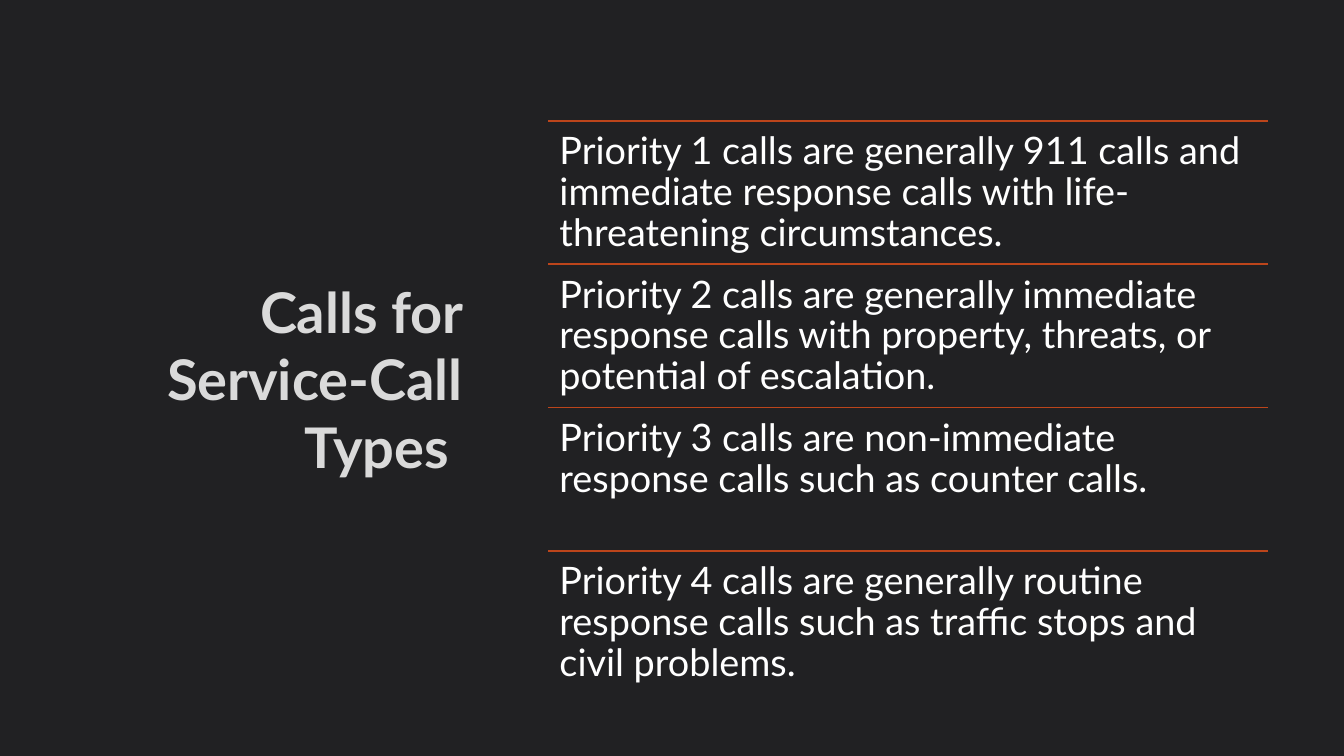
from lxml import etree
from pptx import Presentation
from pptx.dml.color import RGBColor
from pptx.enum.shapes import MSO_CONNECTOR
from pptx.enum.text import MSO_ANCHOR, MSO_AUTO_SIZE, PP_ALIGN
from pptx.oxml import parse_xml
from pptx.oxml.ns import nsdecls, qn
from pptx.util import Cm, Pt

TITLE = "Calls for Service-Call Types "
CALLS = [
    "Priority 1 calls are generally 911 calls and immediate response calls "
    "with life-threatening circumstances.",
    "Priority 2 calls are generally immediate response calls with property, "
    "threats, or potential of escalation.",
    "Priority 3 calls are non-immediate response calls such as counter calls.",
    "Priority 4 calls are generally routine response calls such as traffic "
    "stops and civil problems.",
]
COLORS = {"back": "212123", "title": "DADADA", "text": "FFFFFF", "rule": "BC451B"}
FONT = "Lato"
TITLE_ONLY = 5
STRAIGHT = MSO_CONNECTOR.STRAIGHT
MIDDLE, TOP = MSO_ANCHOR.MIDDLE, MSO_ANCHOR.TOP
LEFT, RIGHT = PP_ALIGN.LEFT, PP_ALIGN.RIGHT
NO_FIT = MSO_AUTO_SIZE.NONE

# Lengths in centimetres
LIST_X, LIST_Y, LIST_W, ROW_H = 13.82, 3.05, 18.14, 3.61
INSET = 0.28


def color(name):
    return RGBColor.from_string(COLORS[name])


def write(shape, text, size, hue, align, anchor):
    """Fill the shape with one formatted paragraph and return it."""
    frame = shape.text_frame
    frame.text = text
    frame.word_wrap = True
    frame.auto_size = NO_FIT
    frame.vertical_anchor = anchor
    para = frame.paragraphs[0]
    para.alignment = align
    font = para.runs[0].font
    font.size = Pt(size)
    font.name = FONT
    font.color.rgb = color(hue)
    return para


def add_title(slide):
    title = slide.shapes.title
    title.left, title.top = Cm(3.38), Cm(LIST_Y)
    title.width, title.height = Cm(8.53), Cm(12.98)
    para = write(title, TITLE, 40, "title", RIGHT, MIDDLE)
    font = para.runs[0].font
    font.bold = True
    glow = parse_xml(
        f'<a:effectLst {nsdecls("a")}>'
        '<a:outerShdw blurRad="38100" dist="38100" dir="2700000" algn="tl">'
        '<a:srgbClr val="000000"><a:alpha val="43000"/></a:srgbClr>'
        '</a:outerShdw></a:effectLst>'
    )
    para.runs[0]._r.rPr.find(qn("a:solidFill")).addnext(glow)


def add_rule(slide, y):
    rule = slide.shapes.add_connector(
        STRAIGHT, Cm(LIST_X), Cm(y), Cm(LIST_X + LIST_W), Cm(y))
    rule.line.color.rgb = color("rule")
    rule.line.width = Pt(1.25)
    etree.SubElement(rule._element.spPr, qn("a:effectLst"))


def add_call(slide, y, text):
    box = slide.shapes.add_textbox(Cm(LIST_X), Cm(y), Cm(LIST_W), Cm(ROW_H))
    para = write(box, text, 27, "text", LEFT, TOP)
    para.line_spacing = 0.9
    frame = box.text_frame
    frame.margin_left = frame.margin_right = Cm(INSET)
    frame.margin_top = frame.margin_bottom = Cm(INSET)


def main():
    deck = Presentation()
    deck.slide_width, deck.slide_height = Cm(33.87), Cm(19.05)
    slide = deck.slides.add_slide(deck.slide_layouts[TITLE_ONLY])
    fill = slide.background.fill
    fill.solid()
    fill.fore_color.rgb = color("back")
    add_title(slide)
    for row, text in enumerate(CALLS):
        y = LIST_Y + row * ROW_H
        add_rule(slide, y)
        add_call(slide, y, text)
    deck.save("out.pptx")


if __name__ == "__main__":
    main()
